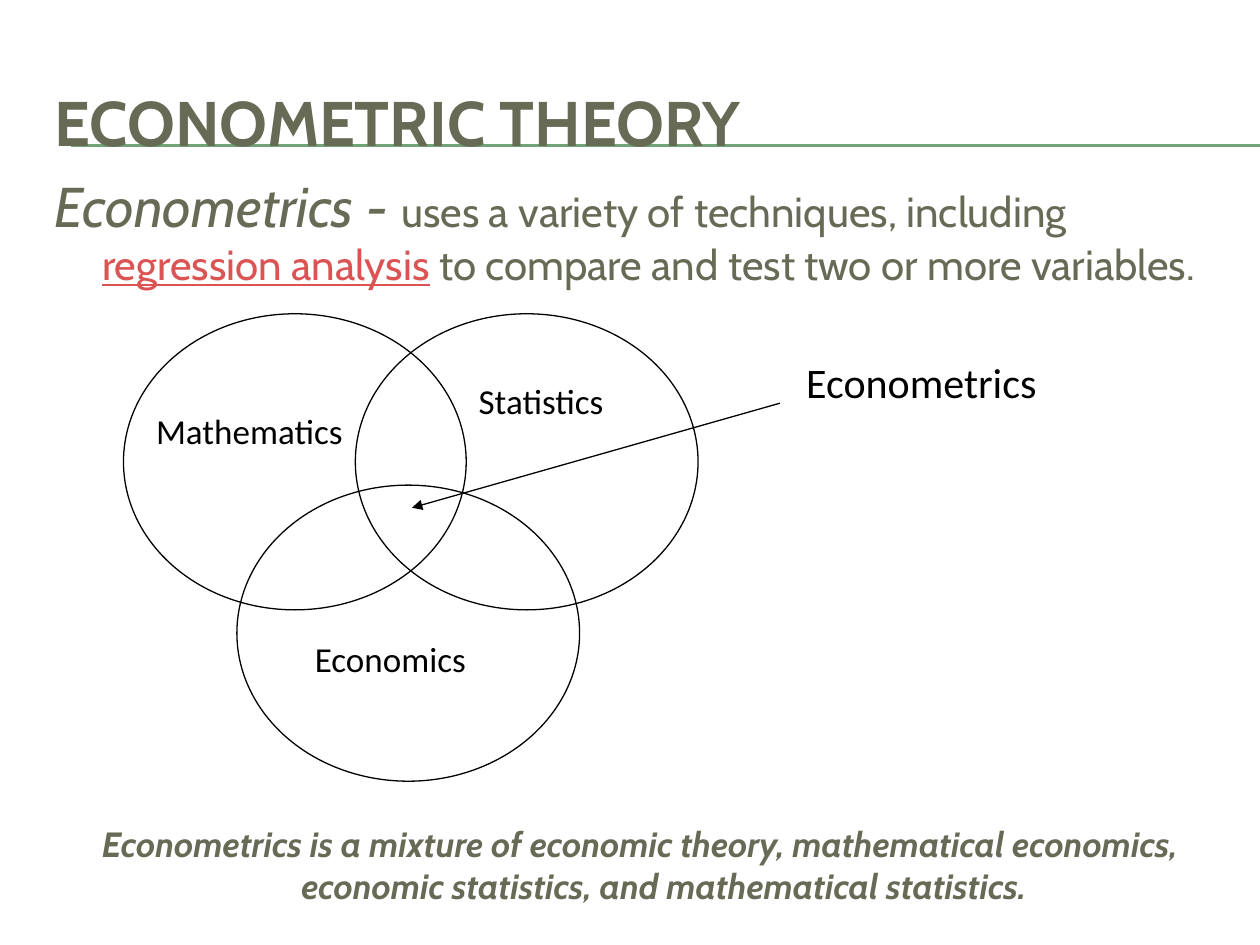
import pptx
import pptx.util
import pptx.dml.color
import pptx.enum.shapes
import pptx.enum.text
import pptx.oxml.xmlchemy
from pptx.util import Inches

OLIVE, GREEN, RED, BLACK = "676A55", "72A376", "DB5353", "000000"


def color(value):
    return pptx.dml.color.RGBColor.from_string(value)


def add_line(start, end, line_color):
    line = page.shapes.add_connector(
        pptx.enum.shapes.MSO_CONNECTOR.STRAIGHT, *map(Inches, start + end))
    line.line.color.rgb = color(line_color)
    line.line.width = pptx.util.Pt(0.75)
    line._element.spPr.append(pptx.oxml.xmlchemy.OxmlElement("a:effectLst"))
    return line


deck = pptx.Presentation()
deck.slide_width, deck.slide_height = Inches(10), Inches(7.5)
page = deck.slides.add_slide(deck.slide_layouts[1])
title, body = page.placeholders

# Title, with a double rule behind it
for y in (1.15, 1.16):
    rule = add_line((0.56, y), (10, y), GREEN)
    title._element.addprevious(rule._element)

title.left, title.top, title.width, title.height = map(Inches, (0.33, 0.5, 9.5, 0.92))
title.text_frame.text = "ECONOMETRIC THEORY"
title.text_frame.vertical_anchor = pptx.enum.text.MSO_ANCHOR.MIDDLE
title.text_frame.auto_size = pptx.enum.text.MSO_AUTO_SIZE.NONE
heading = title.text_frame.paragraphs[0]
heading.alignment = pptx.enum.text.PP_ALIGN.LEFT
span = heading.runs[0]
span.font.name, span.font.size, span.font.bold = "Cabin", pptx.util.Pt(36), True
span.font.color.rgb = color(OLIVE)

# Definition at the top of the body, summary below the diagram
body.left, body.top, body.width, body.height = map(Inches, (0.33, 1.31, 9.5, 6.19))
body.text_frame.auto_size = pptx.enum.text.MSO_AUTO_SIZE.NONE
definition = body.text_frame.paragraphs[0]
for text, size, text_color, italic, underline in (
    ("Econometrics - ", 32, OLIVE, True, False),
    ("uses a variety of techniques, including ", 24, OLIVE, False, False),
    ("regression analysis", 24, RED, False, True),
    (" to compare and test two or more variables.", 24, OLIVE, False, False),
):
    span = definition.add_run()
    span.text = text
    span.font.name, span.font.size = "Cabin", pptx.util.Pt(size)
    span.font.color.rgb = color(text_color)
    span.font.italic, span.font.underline = italic, underline

summary = body.text_frame.add_paragraph()
summary.text = ("Econometrics is a mixture of economic theory, mathematical economics, "
                "economic statistics, and mathematical statistics.")
summary.alignment = pptx.enum.text.PP_ALIGN.CENTER
span = summary.runs[0]
span.font.name, span.font.size = "Cabin", pptx.util.Pt(20)
span.font.bold = span.font.italic = True
span.font.color.rgb = color(OLIVE)

for para, space_before in ((definition, 0), (summary, 305)):
    para.space_before = pptx.util.Pt(space_before)
    properties = para._p.get_or_add_pPr()
    properties.set("marL", str(Inches(0.38)))
    properties.set("indent", str(Inches(-0.38)))
    properties.append(pptx.oxml.xmlchemy.OxmlElement("a:buNone"))

# Venn diagram
arrow = add_line((6.19, 3.2), (3.27, 4.03), BLACK)
arrowhead = pptx.oxml.xmlchemy.OxmlElement("a:tailEnd")
arrowhead.set("type", "triangle")
arrow.line._get_or_add_ln().append(arrowhead)

for left, top in ((1.88, 3.85), (0.98, 2.49), (2.82, 2.49)):
    circle = page.shapes.add_shape(
        pptx.enum.shapes.MSO_SHAPE.OVAL,
        Inches(left), Inches(top), Inches(2.72), Inches(2.35))
    circle.shadow.inherit = False
    circle.fill.background()
    circle.line.color.rgb = color(BLACK)
    circle.line.width = pptx.util.Pt(0.75)

for text, size, *place in (
    ("Statistics", 20, 3.7, 2.96, 1.62, 1.07),
    ("Mathematics", 20, 1.14, 3.2, 1.73, 0.93),
    ("Economics", 20, 2.4, 5.01, 1.62, 0.9),
    ("Econometrics", 24, 6.3, 2.78, 2.17, 1.07),
):
    box = page.shapes.add_textbox(*map(Inches, place))
    box.text_frame.word_wrap = True
    box.text_frame.text = text
    para = box.text_frame.paragraphs[0]
    para.space_after = pptx.util.Pt(10)
    span = para.runs[0]
    span.font.name, span.font.size = "Calibri", pptx.util.Pt(size)
    span.font.color.rgb = color(BLACK)

deck.save("out.pptx")
